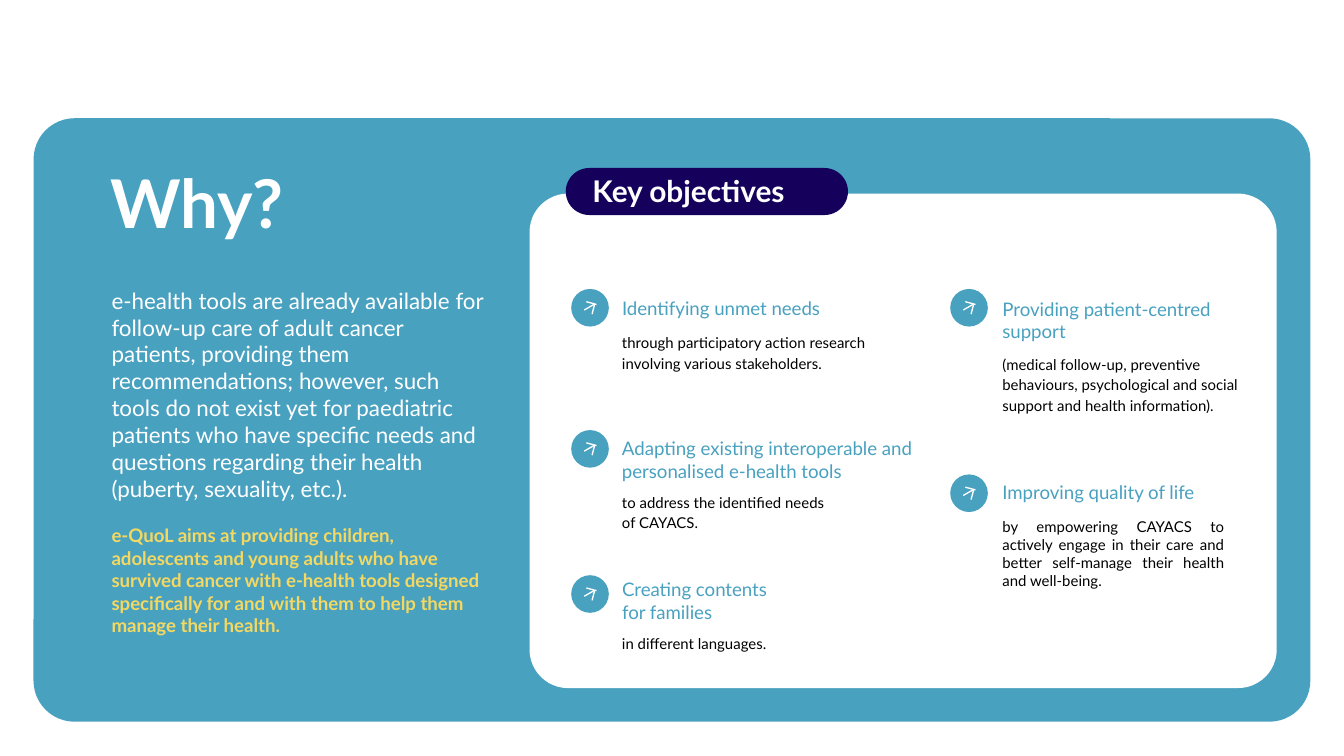
from dataclasses import dataclass

from lxml.etree import SubElement
from pptx import Presentation
from pptx.dml.color import RGBColor
from pptx.enum.shapes import MSO_SHAPE as Preset
from pptx.enum.text import MSO_ANCHOR as Anchor, MSO_AUTO_SIZE as AutoSize, PP_ALIGN as Align
from pptx.oxml.ns import qn
from pptx.util import Inches, Pt

COLORS = {"teal": "49A1C0", "navy": "15015B", "yellow": "F3D861",
          "white": "FFFFFF", "black": "000000"}
FONT = "Lato"
BADGE_SIZE = 0.28
BADGE_LEFT = (4.25, 7.07)
TEXT_LEFT = (4.53, 7.36)


@dataclass
class Box:
    """A text area: top, width and height in inches."""
    top: float
    width: float
    height: float


@dataclass
class Objective:
    column: int
    badge_top: float
    heading: str
    heading_box: Box
    detail: str
    detail_box: Box
    align: Align = Align.LEFT
    spacing: float = 1.15


@dataclass
class Bar:
    """A stroke of the arrow, placed relative to its badge."""
    left: float
    top: float
    width: float
    height: float
    rotation: int


ARROW = (Bar(0.11, 0.10, 0.08, 0.01, 195),
         Bar(0.16, 0.11, 0.01, 0.08, 195),
         Bar(0.13, 0.09, 0.01, 0.09, 240))

OBJECTIVES = (
    Objective(0, 2.15, "Identifying unmet needs", Box(2.11, 1.89, 0.37),
              "through participatory action research involving various stakeholders.",
              Box(2.36, 2.13, 0.51)),
    Objective(0, 3.2, "Adapting existing interoperable and personalised e-health tools",
              Box(3.15, 2.36, 0.54),
              "to address the identified needs\vof CAYACS.", Box(3.55, 2.13, 0.51)),
    Objective(0, 4.28, "Creating contents\vfor families", Box(4.2, 2.25, 0.54),
              "in different languages.", Box(4.6, 2.13, 0.36)),
    Objective(1, 2.15, "Providing patient-centred\vsupport", Box(2.11, 1.98, 0.54),
              "(medical follow-up, preventive behaviours, psychological and social "
              "support and health information).", Box(2.52, 2.08, 0.67)),
    Objective(1, 3.53, "Improving quality of life", Box(3.48, 1.98, 0.37),
              "by empowering CAYACS to actively engage in their care and better "
              "self-manage their health and well-being.", Box(3.75, 1.85, 0.74),
              Align.JUSTIFY, 1.0),
)


def rgb(color: str) -> RGBColor:
    return RGBColor.from_string(COLORS[color])


def add_filled(shapes, preset: Preset, left: float, top: float, width: float,
               height: float, color: str, corner: float | None = None):
    shape = shapes.add_shape(preset, Inches(left), Inches(top), Inches(width), Inches(height))
    shape.shadow.inherit = False
    shape.fill.solid()
    shape.fill.fore_color.rgb = rgb(color)
    shape.line.fill.background()
    if corner is not None:
        shape.adjustments[0] = corner
    return shape


def place(shape, left: float, box: Box) -> None:
    shape.left, shape.top = Inches(left), Inches(box.top)
    shape.width, shape.height = Inches(box.width), Inches(box.height)


def format_frame(frame) -> None:
    frame.word_wrap = True
    frame.auto_size = AutoSize.SHAPE_TO_FIT_TEXT
    frame.vertical_anchor = Anchor.MIDDLE
    frame.margin_left = frame.margin_right = Inches(0.1)
    frame.margin_top = frame.margin_bottom = Inches(0.1)


def format_paragraph(paragraph, size: float, color: str, bold: bool = False,
                     spacing: float = 1.0, align: Align = Align.LEFT,
                     before: float = 0) -> None:
    paragraph.alignment = align
    paragraph.line_spacing = spacing
    paragraph.space_before = Pt(before)
    for run in paragraph.runs:
        run.font.name = FONT
        run.font.size = Pt(size)
        run.font.bold = bold
        run.font.color.rgb = rgb(color)


def remove_bullet(paragraph) -> None:
    properties = paragraph._p.get_or_add_pPr()
    properties.set("marL", "0")
    properties.set("indent", "0")
    SubElement(properties, qn("a:buNone"))


def add_text(shapes, text: str, left: float, box: Box, size: float, color: str,
             bold: bool = False, spacing: float = 1.0, align: Align = Align.LEFT) -> None:
    label = shapes.add_textbox(0, 0, 0, 0)
    place(label, left, box)
    label.text_frame.text = text
    format_frame(label.text_frame)
    format_paragraph(label.text_frame.paragraphs[0], size, color, bold, spacing, align)


def add_badge(shapes, left: float, top: float) -> None:
    badge = shapes.add_group_shape().shapes
    add_filled(badge, Preset.OVAL, left, top, BADGE_SIZE, BADGE_SIZE, "teal")
    for bar in ARROW:
        stroke = add_filled(badge, Preset.ROUNDED_RECTANGLE, left + bar.left, top + bar.top,
                            bar.width, bar.height, "white", 0.5)
        stroke.rotation = bar.rotation


def add_objective(shapes, item: Objective) -> None:
    left = TEXT_LEFT[item.column]
    add_badge(shapes, BADGE_LEFT[item.column], item.badge_top)
    add_text(shapes, item.heading, left, item.heading_box, 10, "teal")
    add_text(shapes, item.detail, left, item.detail_box, 8, "black",
             spacing=item.spacing, align=item.align)


def main() -> None:
    # Widescreen slide, 16:9
    deck = Presentation()
    deck.slide_width = Inches(10)
    deck.slide_height = Inches(10 * 9 / 16)
    slide = deck.slides.add_slide(deck.slide_layouts[1])
    shapes = slide.shapes
    why, reasons = shapes.title, slide.placeholders[1]

    # Panels, with the placeholders brought in front of them
    add_filled(shapes, Preset.ROUNDED_RECTANGLE, 0.25, 0.88, 9.5, 4.49, "teal", 0.068)
    objectives_panel = add_filled(shapes, Preset.ROUNDED_RECTANGLE,
                                  3.94, 1.44, 5.56, 3.68, "white", 0.078)
    objectives_panel.element.addnext(reasons.element)
    objectives_panel.element.addnext(why.element)

    # Left side: title and reasons
    place(why, 0.72, Box(1.16, 2.75, 0.75))
    why.text_frame.text = "Why?"
    format_frame(why.text_frame)
    format_paragraph(why.text_frame.paragraphs[0], 36, "white", bold=True, spacing=0.9)

    place(reasons, 0.73, Box(2.02, 2.99, 2.83))
    format_frame(reasons.text_frame)
    need = reasons.text_frame.paragraphs[0]
    need.text = ("e-health tools are already available for follow-up care of adult cancer "
                 "patients, providing them recommendations; however, such tools do not exist "
                 "yet for paediatric patients who have specific needs and questions regarding "
                 "their health (puberty, sexuality, etc.).")
    aim = reasons.text_frame.add_paragraph()
    aim.text = ("e-QuoL aims at providing children, adolescents and young adults who have "
                "survived cancer with e-health tools designed specifically for and with them "
                "to help them manage their health.")
    for paragraph in (need, aim):
        remove_bullet(paragraph)
    format_paragraph(need, 12, "white")
    format_paragraph(aim, 10, "yellow", bold=True, before=12)

    # Right side: key objectives
    add_filled(shapes, Preset.ROUNDED_RECTANGLE, 4.21, 1.25, 2.1, 0.35, "navy", 0.5)
    add_text(shapes, "Key objectives", 4.31, Box(1.18, 1.89, 0.47), 16, "white", bold=True)
    for item in OBJECTIVES:
        add_objective(shapes, item)

    deck.save("out.pptx")


if __name__ == "__main__":
    main()
